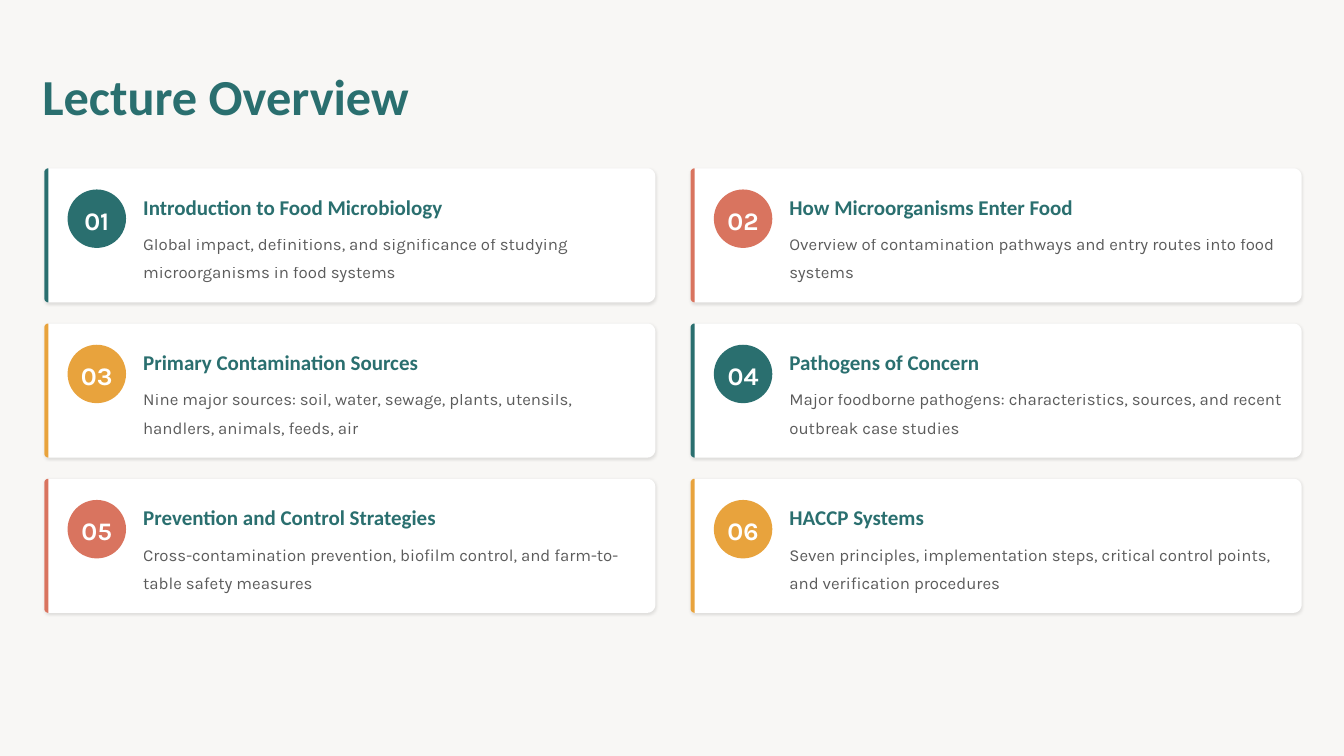
from dataclasses import dataclass
from math import cos, pi, sin

from lxml.etree import SubElement
from pptx import Presentation
from pptx.dml.color import RGBColor
from pptx.enum.shapes import MSO_SHAPE as Preset
from pptx.enum.text import MSO_ANCHOR as Anchor, PP_ALIGN as Align
from pptx.oxml.ns import qn
from pptx.shapes.autoshape import Shape
from pptx.slide import Slide
from pptx.text.text import TextFrame
from pptx.util import Inches, Pt


@dataclass(frozen=True)
class TextStyle:
    font: str
    size: float
    color: str
    bold: bool = False
    line_spacing: float = 1.0
    align: Align = Align.LEFT
    opacity: int = 100


@dataclass(frozen=True)
class Theme:
    background: str = "F8F7F5"
    card: str = "FFFFFF"
    shadow: str = "000000"
    accents: tuple[str, ...] = ("2A6F6F", "D9745F", "E8A33D")
    title: TextStyle = TextStyle("Calibri", 36, "2A6F6F", True, 0.8)
    number: TextStyle = TextStyle("Karla", 18, "FFFFFF", True, 1.1, Align.CENTER)
    heading: TextStyle = TextStyle("Calibri", 15, "2A6F6F", True, 1.2)
    summary: TextStyle = TextStyle("Karla", 12, "333333", False, 1.4, opacity=80)


@dataclass(frozen=True)
class Topic:
    heading: str
    summary: str


@dataclass(frozen=True)
class Box:
    left: float
    top: float
    width: float
    height: float


THEME = Theme()
TOPICS = (
    Topic("Introduction to Food Microbiology",
          "Global impact, definitions, and significance of studying "
          "microorganisms in food systems"),
    Topic("How Microorganisms Enter Food",
          "Overview of contamination pathways and entry routes into food systems"),
    Topic("Primary Contamination Sources",
          "Nine major sources: soil, water, sewage, plants, utensils, "
          "handlers, animals, feeds, air"),
    Topic("Pathogens of Concern",
          "Major foodborne pathogens: characteristics, sources, and recent "
          "outbreak case studies"),
    Topic("Prevention and Control Strategies",
          "Cross-contamination prevention, biofilm control, and farm-to-table "
          "safety measures"),
    Topic("HACCP Systems",
          "Seven principles, implementation steps, critical control points, "
          "and verification procedures"),
)
COLUMNS = 2
GRID_LEFT, GRID_TOP = 0.44, 1.67
COLUMN_PITCH, ROW_PITCH = 6.41, 1.54
CARD_WIDTH, CARD_HEIGHT = 6.06, 1.33
BAR_WIDTH = 0.04
LEFT_RADIUS, RIGHT_RADIUS = 0.04, 0.08
ARC_STEPS = 8


def paint(shape: Shape, color: str) -> None:
    shape.fill.solid()
    shape.fill.fore_color.rgb = RGBColor.from_string(color)
    shape.line.fill.background()
    shape.shadow.inherit = False


def write(frame: TextFrame, text: str, style: TextStyle, wrap: bool = True) -> None:
    frame.word_wrap = wrap
    frame.vertical_anchor = Anchor.MIDDLE
    frame.margin_left = frame.margin_right = 0
    frame.margin_top = frame.margin_bottom = 0
    paragraph = frame.paragraphs[0]
    paragraph.alignment = style.align
    paragraph.line_spacing = style.line_spacing
    run = paragraph.add_run()
    run.text = text
    run.font.name = style.font
    run.font.size = Pt(style.size)
    run.font.bold = style.bold
    run.font.color.rgb = RGBColor.from_string(style.color)
    if style.opacity < 100:
        color = run.font.fill._xPr.find(qn("a:solidFill"))[0]
        SubElement(color, qn("a:alpha"), val=str(style.opacity * 1000))


def add_text(slide: Slide, box: Box, text: str, style: TextStyle) -> None:
    text_box = slide.shapes.add_textbox(
        Inches(box.left), Inches(box.top), Inches(box.width), Inches(box.height))
    write(text_box.text_frame, text, style)


def add_panel(slide: Slide, box: Box, color: str, right_radius: float) -> Shape:
    """Draw a panel whose left and right corners have different radii."""
    right, bottom = box.left + box.width, box.top + box.height
    corners = (
        (box.left + LEFT_RADIUS, box.top + LEFT_RADIUS, LEFT_RADIUS, 2),
        (right - right_radius, box.top + right_radius, right_radius, 3),
        (right - right_radius, bottom - right_radius, right_radius, 0),
        (box.left + LEFT_RADIUS, bottom - LEFT_RADIUS, LEFT_RADIUS, 1),
    )
    points = []
    for center_x, center_y, radius, quarter in corners:
        steps = ARC_STEPS if radius else 0
        for step in range(steps + 1):
            angle = (quarter + step / ARC_STEPS) * pi / 2
            points.append((Inches(center_x + radius * cos(angle)),
                           Inches(center_y + radius * sin(angle))))
    builder = slide.shapes.build_freeform(*points[0])
    builder.add_line_segments(points[1:], close=True)
    panel = builder.convert_to_shape()
    paint(panel, color)
    return panel


def add_soft_shadow(shape: Shape) -> None:
    effects = shape._element.spPr.find(qn("a:effectLst"))
    shadow = SubElement(effects, qn("a:outerShdw"), blurRad=str(Pt(2.2)),
                        dist=str(Pt(0.8)), dir=str(90 * 60000), rotWithShape="0")
    color = SubElement(shadow, qn("a:srgbClr"), val=THEME.shadow)
    SubElement(color, qn("a:alpha"), val=str(10 * 1000))


def add_badge(slide: Slide, box: Box, text: str, color: str) -> None:
    badge = slide.shapes.add_shape(
        Preset.OVAL, Inches(box.left), Inches(box.top),
        Inches(box.width), Inches(box.height))
    paint(badge, color)
    write(badge.text_frame, text, THEME.number, wrap=False)


def add_topic_card(slide: Slide, index: int, topic: Topic) -> None:
    row, column = divmod(index, COLUMNS)
    left = GRID_LEFT + column * COLUMN_PITCH
    top = GRID_TOP + row * ROW_PITCH
    accent = THEME.accents[index % len(THEME.accents)]
    card = add_panel(slide, Box(left, top, CARD_WIDTH, CARD_HEIGHT),
                     THEME.card, RIGHT_RADIUS)
    add_soft_shadow(card)
    add_panel(slide, Box(left, top, BAR_WIDTH, CARD_HEIGHT), accent, 0)
    add_badge(slide, Box(left + 0.23, top + 0.21, 0.58, 0.58),
              f"{index + 1:02}", accent)
    add_text(slide, Box(left + 0.98, top + 0.21, 4.98, 0.29),
             topic.heading, THEME.heading)
    add_text(slide, Box(left + 0.98, top + 0.58, 4.96, 0.54),
             topic.summary, THEME.summary)


def main() -> None:
    presentation = Presentation()
    presentation.slide_width = Inches(13.33)
    presentation.slide_height = Inches(7.5)
    slide = presentation.slides.add_slide(presentation.slide_layouts[6])
    background = slide.background.fill
    background.solid()
    background.fore_color.rgb = RGBColor.from_string(THEME.background)
    add_text(slide, Box(0.42, 0.75, 12.75, 0.5), "Lecture Overview", THEME.title)
    for index, topic in enumerate(TOPICS):
        add_topic_card(slide, index, topic)
    presentation.save("out.pptx")


if __name__ == "__main__":
    main()
